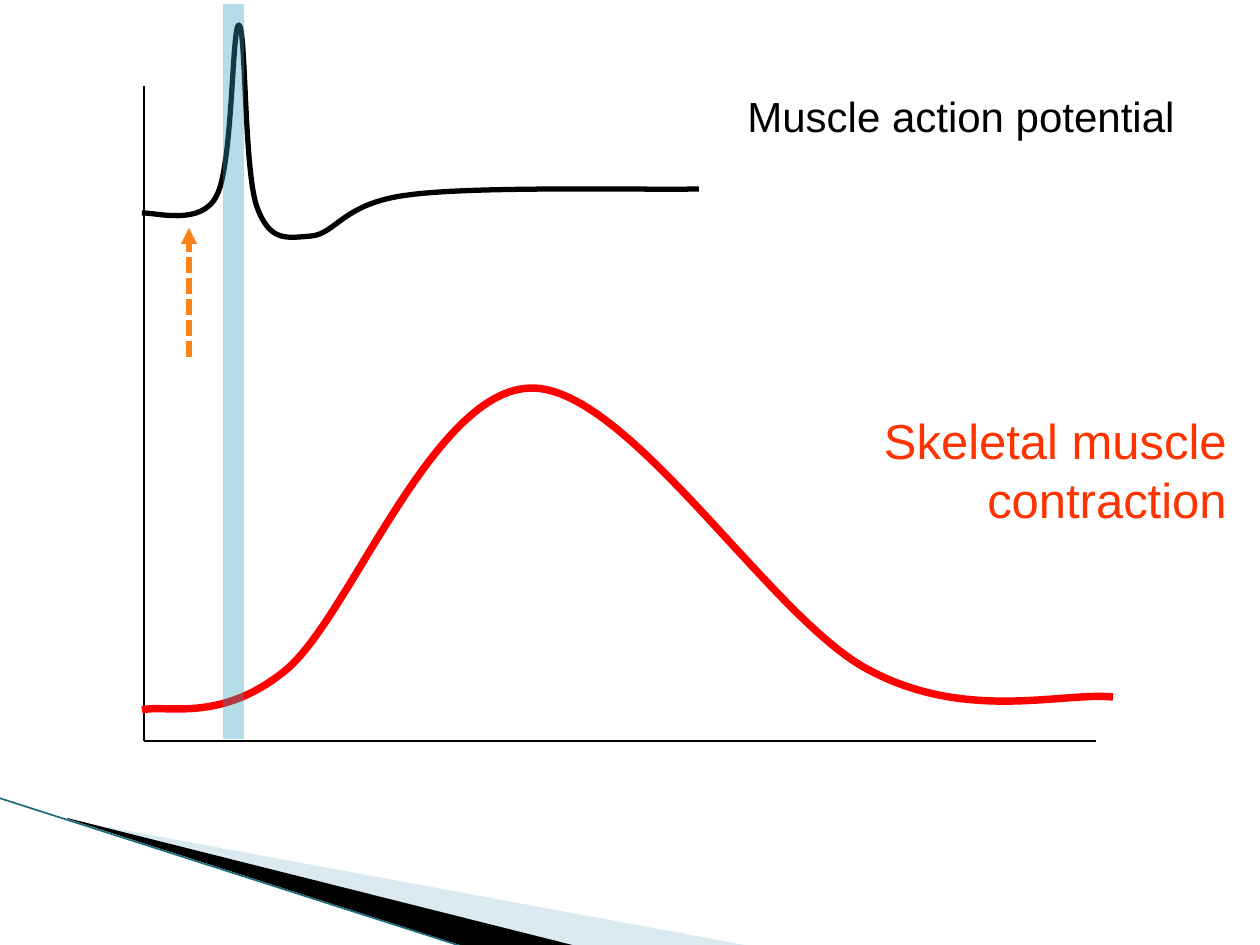
from lxml.etree import SubElement
from pptx import Presentation
from pptx.dml.color import RGBColor
from pptx.enum.dml import MSO_LINE
from pptx.enum.shapes import MSO_CONNECTOR, MSO_SHAPE
from pptx.enum.text import PP_ALIGN
from pptx.oxml.ns import qn
from pptx.util import Pt

PX = 914400 / 126
BLACK = RGBColor(0x00, 0x00, 0x00)
RED = RGBColor(0xFF, 0x00, 0x00)
ORANGE_RED = RGBColor(0xFF, 0x33, 0x00)
ORANGE = RGBColor(0xFF, 0x81, 0x19)
TEAL = RGBColor(0x2D, 0xA2, 0xBF)
DARK_TEAL = RGBColor(0x1B, 0x6B, 0x80)
PALE_BLUE = RGBColor(0xA0, 0xCB, 0xDC)

deck = Presentation()
deck.slide_width, deck.slide_height = round(1260 * PX), round(945 * PX)
page = deck.slides.add_slide(deck.slide_layouts[6])


def fill_shape(shape, color, opacity):
    """Give a shape a plain fill, with opacity in percent, and no outline."""
    shape.shadow.inherit = False
    shape.fill.solid()
    shape.fill.fore_color.rgb = color
    shape.line.fill.background()
    if opacity < 100:
        tint = shape.fill._xPr.find(qn("a:solidFill"))[0]
        SubElement(tint, qn("a:alpha")).set("val", str(opacity * 1000))


def add_line(start, end, color, width):
    points = [round(value * PX) for value in (*start, *end)]
    line = page.shapes.add_connector(MSO_CONNECTOR.STRAIGHT, *points)
    line.line.color.rgb = color
    line.line.width = Pt(width)
    SubElement(line._element.spPr, qn("a:effectLst"))
    return line


# Corner decoration: each outline reaches beyond its own frame
wedges = [
    ([(69, 820), (750, 946), (575, 946), (69, 819)], (98, 689, 524, 199), PALE_BLUE, 40),
    ([(67, 818), (576, 946), (469, 948), (68, 819)], (-8, 798, 524, 116), BLACK, 100),
]
for points, frame, color, opacity in wedges:
    outline = page.shapes.build_freeform(*points[0], scale=PX)
    outline.add_line_segments(points[1:], close=True)
    wedge = outline.convert_to_shape()
    wedge.left, wedge.top, wedge.width, wedge.height = (round(value * PX) for value in frame)
    path = next(wedge._element.iter(qn("a:path")))
    path.set("w", str(frame[2]))
    path.set("h", str(frame[3]))
    for spot, (x, y) in zip(path.iter(qn("a:pt")), points):
        spot.set("x", str(x - frame[0]))
        spot.set("y", str(y - frame[1]))
    fill_shape(wedge, color, opacity)
add_line((-1, 798), (467, 948), DARK_TEAL, 0.95)

# Axes
add_line((144, 741), (1096, 741), BLACK, 0.75)
add_line((144, 741), (144, 86), BLACK, 0.75)

# Curves: a start, then cubic segments (two controls and an end)
action_potential = [
    (142, 213), (155, 212), (202, 227), (217, 195),
    (233, 164), (232, 23), (239, 25),
    (246, 26), (244, 171), (257, 207),
    (270, 242), (286, 238), (311, 236),
    (336, 234), (343, 203), (408, 195),
    (472, 186), (639, 190), (699, 189),
]
contraction = [
    (142, 710), (166, 704), (220, 724), (286, 670),
    (350, 617), (433, 388), (532, 388),
    (629, 388), (772, 620), (869, 670),
    (966, 722), (1062, 692), (1113, 697),
]
for knots, color, width in [(action_potential, BLACK, 3), (contraction, RED, 4.25)]:
    outline = page.shapes.build_freeform(*knots[0], scale=PX)
    outline.add_line_segments(knots[1:], close=False)
    curve = outline.convert_to_shape()
    # Gather every three line points into one cubic segment
    path = next(curve._element.iter(qn("a:path")))
    steps = path.findall(qn("a:lnTo"))
    for first in range(0, len(steps), 3):
        segment = SubElement(path, qn("a:cubicBezTo"))
        for step in steps[first:first + 3]:
            segment.append(step[0])
            path.remove(step)
    curve.shadow.inherit = False
    curve.fill.background()
    curve.line.color.rgb = color
    curve.line.width = Pt(width)

# Labels
labels = [
    ("Muscle action potential", (658, 84, 529, 63), 24, BLACK),
    ("Skeletal muscle contraction", (724, 404, 515, 131), 28, ORANGE_RED),
]
for text, place, size, color in labels:
    box = page.shapes.add_textbox(*(round(value * PX) for value in place))
    box.text_frame.word_wrap = True
    para = box.text_frame.paragraphs[0]
    para.alignment = PP_ALIGN.RIGHT
    span = para.add_run()
    span.text = text
    for name, value in {"name": "Arial", "size": Pt(size)}.items():
        setattr(span.font, name, value)
    span.font.color.rgb = color

# Stimulus arrow
arrow = add_line((189, 357), (189, 228), ORANGE, 3)
arrow.line.dash_style = MSO_LINE.SQUARE_DOT
SubElement(arrow.line._get_or_add_ln(), qn("a:tailEnd")).set("type", "triangle")

# Band over both curves
band = page.shapes.add_shape(
    MSO_SHAPE.RECTANGLE, *(round(value * PX) for value in (223, 4, 21, 735)))
fill_shape(band, TEAL, 36)

deck.save("out.pptx")
